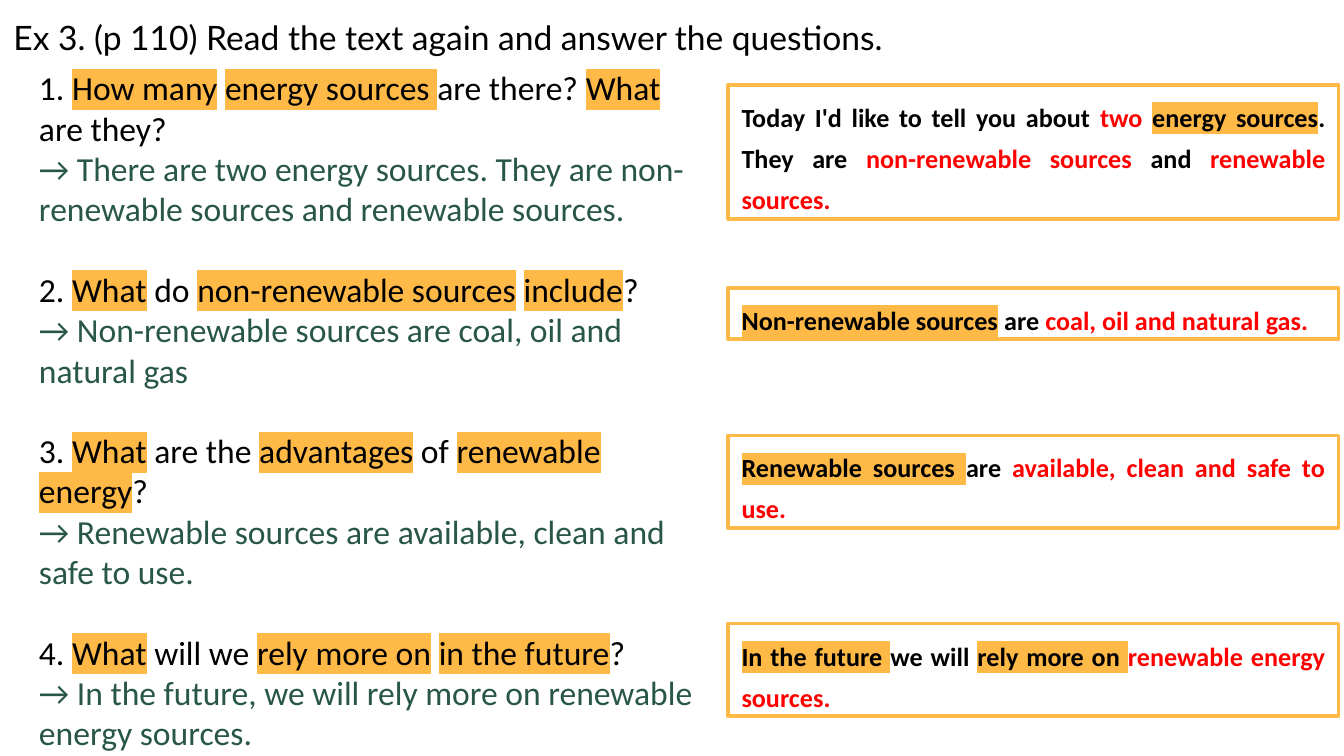
from dataclasses import dataclass

from lxml import etree
from pptx import Presentation
from pptx import util as u
from pptx.dml.color import RGBColor
from pptx.enum import shapes, text
from pptx.oxml import ns


@dataclass(frozen=True)
class Theme:
    ink: str = "000000"
    answer: str = "285648"
    key: str = "FF0000"
    accent: str = "FFB947"
    paper: str = "FFFFFF"
    title_font: str = "Lato"
    body_font: str = "Calibri"
    large: float = 18
    small: float = 14


@dataclass(frozen=True)
class Span:
    text: str
    color: str = Theme.ink
    marked: bool = False


@dataclass(frozen=True)
class Exercise:
    question: tuple[Span, ...]
    answer: str
    evidence: tuple[Span, ...]
    top: float
    height: float


THEME = Theme()
EVIDENCE_LEFT, EVIDENCE_WIDTH = 390.2, 326.9


def mark(words: str) -> Span:
    return Span(words, marked=True)


def key(words: str) -> Span:
    return Span(words, color=THEME.key)


EXERCISES = (
    Exercise(
        (Span("1. "), mark("How many"), Span(" "), mark("energy sources "),
         Span("are there? "), mark("What"), Span(" are they?")),
        "There are two energy sources. They are non-renewable sources and renewable sources.",
        (Span("Today I'd like to tell you about "), key("two "), mark("energy sources"),
         Span(". They are "), key("non-renewable sources "), Span("and "),
         key("renewable sources.")),
        45.4, 72,
    ),
    Exercise(
        (Span("2. "), mark("What"), Span(" do "), mark("non-renewable sources"),
         Span(" "), mark("include"), Span("?")),
        "Non-renewable sources are coal, oil and natural gas",
        (mark("Non-renewable sources"), Span(" are "), key("coal, oil and natural gas. ")),
        154.1, 27.7,
    ),
    Exercise(
        (Span("3. "), mark("What"), Span(" are the "), mark("advantages"), Span(" of "),
         mark("renewable energy"), Span("?")),
        "Renewable sources are available, clean and safe to use.",
        (mark("Renewable sources "), Span("are "), key("available, clean and safe to use. ")),
        233.3, 49.7,
    ),
    Exercise(
        (Span("4. "), mark("What"), Span(" will we "), mark("rely more on"), Span(" "),
         mark("in the future"), Span("?")),
        "In the future, we will rely more on renewable energy sources.",
        (mark("In the future "), Span("we will "), mark("rely more on "),
         key("renewable energy sources. ")),
        334.1, 49.7,
    ),
)


def write(paragraph, words: str, *, font: str = THEME.body_font, size: float = THEME.large,
          color: str = THEME.ink, bold: bool = False, marked: bool = False) -> None:
    run = paragraph.add_run()
    run.text = words
    run.font.name = font
    run.font.size = u.Pt(size)
    run.font.bold = bold
    run.font.color.rgb = RGBColor.from_string(color)
    if marked:
        highlight = etree.Element(ns.qn("a:highlight"))
        etree.SubElement(highlight, ns.qn("a:srgbClr"), val=THEME.accent)
        run.font._element.find(ns.qn("a:solidFill")).addnext(highlight)


def write_spans(paragraph, spans: tuple[Span, ...], **style) -> None:
    for span in spans:
        write(paragraph, span.text, color=span.color, marked=span.marked, **style)


def place(shape, left: float, top: float, width: float, height: float) -> None:
    shape.left, shape.top = u.Pt(left), u.Pt(top)
    shape.width, shape.height = u.Pt(width), u.Pt(height)


def format_plain(paragraph, space_before: float = 0) -> None:
    paragraph.alignment = text.PP_ALIGN.LEFT
    paragraph.line_spacing = 1.0
    paragraph.space_before = u.Pt(space_before)
    paragraph.space_after = u.Pt(0)
    properties = paragraph._p.get_or_add_pPr()
    properties.set("marL", "0")
    properties.set("indent", "0")
    etree.SubElement(properties, ns.qn("a:buNone"))


def fill_title(title) -> None:
    place(title, 0, 0, 606.2, 39.6)
    frame = title.text_frame
    frame.word_wrap = True
    frame.auto_size = text.MSO_AUTO_SIZE.NONE
    frame.vertical_anchor = text.MSO_ANCHOR.MIDDLE
    frame.margin_left = frame.margin_right = u.Pt(7.2)
    frame.margin_top = frame.margin_bottom = u.Pt(7.2)
    paragraph = frame.paragraphs[0]
    format_plain(paragraph)
    write(paragraph, "Ex 3. (p 110) Read the text again and answer the questions.",
          font=THEME.title_font)


def fill_questions(body, exercises: tuple[Exercise, ...]) -> None:
    place(body, 13.7, 32.4, 371.5, 378)
    frame = body.text_frame
    frame.word_wrap = True
    frame.auto_size = text.MSO_AUTO_SIZE.NONE
    frame.vertical_anchor = text.MSO_ANCHOR.TOP
    for index, exercise in enumerate(exercises):
        question = frame.add_paragraph() if index else frame.paragraphs[0]
        format_plain(question, space_before=21.6 if index else 0)
        write_spans(question, exercise.question)
        answer = frame.add_paragraph()
        format_plain(answer)
        write(answer, f"→ {exercise.answer}", color=THEME.answer)


def add_evidence(slide, exercise: Exercise) -> None:
    box = slide.shapes.add_shape(
        shapes.MSO_SHAPE.RECTANGLE, u.Pt(EVIDENCE_LEFT), u.Pt(exercise.top),
        u.Pt(EVIDENCE_WIDTH), u.Pt(exercise.height))
    box.shadow.inherit = False
    box.fill.solid()
    box.fill.fore_color.rgb = RGBColor.from_string(THEME.paper)
    box.line.color.rgb = RGBColor.from_string(THEME.accent)
    box.line.width = u.Pt(2)
    frame = box.text_frame
    frame.word_wrap = True
    frame.auto_size = text.MSO_AUTO_SIZE.SHAPE_TO_FIT_TEXT
    frame.vertical_anchor = text.MSO_ANCHOR.TOP
    paragraph = frame.paragraphs[0]
    paragraph.alignment = text.PP_ALIGN.JUSTIFY
    paragraph.line_spacing = u.Pt(22)
    write_spans(paragraph, exercise.evidence, size=THEME.small, bold=True)


def main() -> None:
    presentation = Presentation()
    presentation.slide_width, presentation.slide_height = u.Pt(720), u.Pt(405)
    slide = presentation.slides.add_slide(presentation.slide_layouts[1])
    fill_title(slide.shapes.title)
    fill_questions(slide.placeholders[1], EXERCISES)
    for exercise in EXERCISES:
        add_evidence(slide, exercise)
    presentation.save("out.pptx")


if __name__ == "__main__":
    main()
